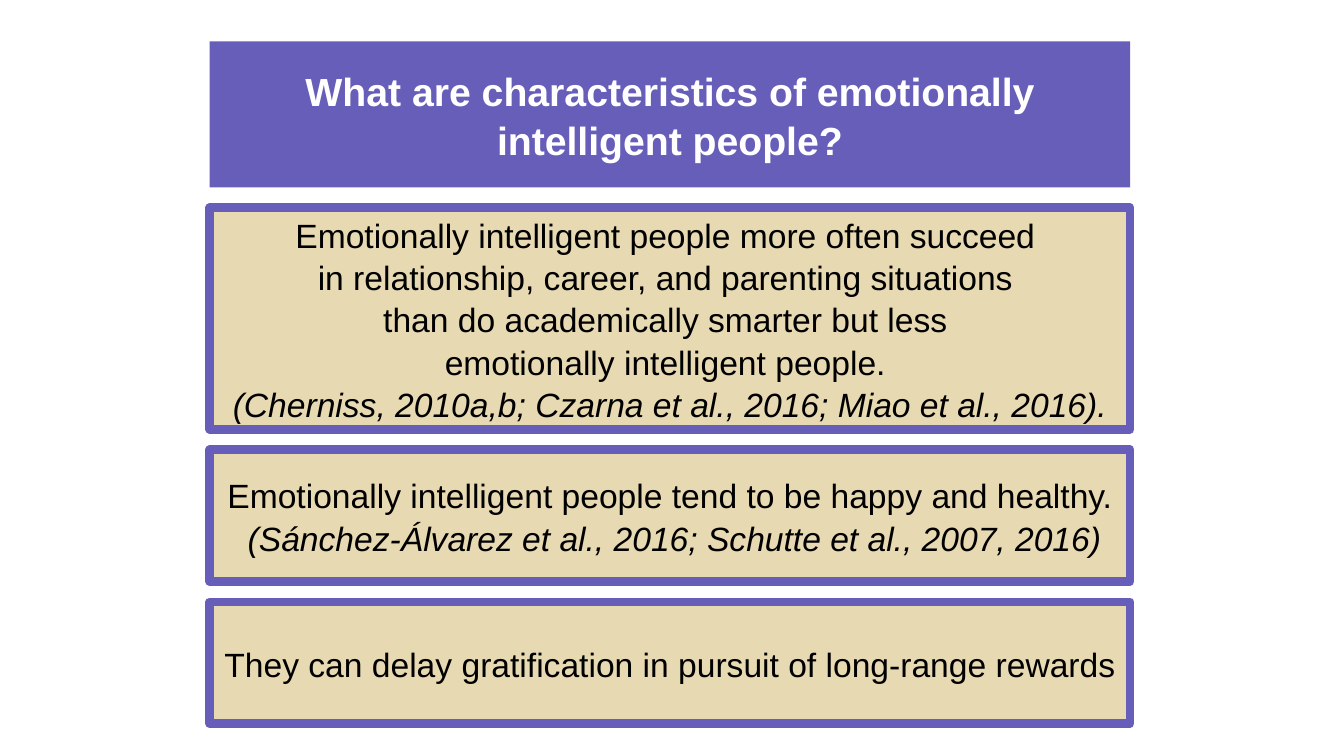
from lxml.etree import SubElement as Sub
from pptx import Presentation as Deck
from pptx.dml.color import RGBColor as Color
from pptx.enum.shapes import MSO_SHAPE as Kind
from pptx.enum.text import MSO_ANCHOR as Anchor, PP_ALIGN as Align
from pptx.oxml.ns import qn
from pptx.util import Inches, Pt

PURPLE, SAND, WHITE, BLACK = "665EB8", "E7D9B1", "FFFFFF", "000000"
LEFT, WIDTH, TOP, GAP = 2.08, 9.13, 0.41, 0.2

TITLE = "What are characteristics of emotionally intelligent people?"
CARDS = [
    (2.2, [
        "Emotionally intelligent people more often succeed ",
        "in relationship, career, and parenting situations ",
        "than do academically smarter but less ",
        "emotionally intelligent people. ",
        "(Cherniss, 2010a,b; Czarna et al., 2016; Miao et al., 2016).",
    ]),
    (1.31, [
        "Emotionally intelligent people tend to be happy and healthy.",
        " (Sánchez-Álvarez et al., 2016; Schutte et al., 2007, 2016)",
    ]),
    (1.21, ["They can delay gratification in pursuit of long-range rewards"]),
]


def paint(form, tone):
    """Give a fill or font color a hex tone."""
    form.rgb = Color.from_string(tone)


def panel(slide, box, tone, lines, size, ink):
    """Draw a filled box with centred lines of text."""
    shape = slide.shapes.add_shape(Kind.RECTANGLE, *map(Inches, box))
    shape.shadow.inherit = False
    shape.fill.solid()
    paint(shape.fill.fore_color, tone)
    shape.line.fill.background()
    frame = shape.text_frame
    frame.word_wrap = True
    frame.vertical_anchor = Anchor.MIDDLE
    frame.text = "\n".join(lines)
    for para in frame.paragraphs:
        para.alignment = Align.CENTER
        para.line_spacing = 1.05
        for run in para.runs:
            run.font.name = "Arial"
            run.font.size = Pt(size)
            paint(run.font.color, ink)
    return shape


def header(slide, box):
    """Draw the title band in bold white."""
    shape = panel(slide, box, PURPLE, [TITLE], 28, WHITE)
    shape.text_frame.paragraphs[0].runs[0].font.bold = True


def card(slide, box, lines):
    """Draw a bordered card with its citation in italics."""
    shape = panel(slide, box, SAND, lines, 24, BLACK)
    line = shape.line
    line.fill.solid()
    paint(line.color, PURPLE)
    line.width = Pt(6)
    Sub(line._get_or_add_ln(), qn("a:round"))
    for para in shape.text_frame.paragraphs:
        if para.text.lstrip().startswith("("):
            para.runs[0].font.italic = True


def main():
    """Build the slide and save it."""
    deck = Deck()
    deck.slide_width, deck.slide_height = Inches(13.33), Inches(7.5)
    slide = deck.slides.add_slide(deck.slide_layouts[6])
    tall = 1.45
    header(slide, (LEFT, TOP, WIDTH, tall))
    top = TOP + tall + GAP
    for tall, lines in CARDS:
        card(slide, (LEFT, top, WIDTH, tall), lines)
        top += tall + GAP
    deck.save("out.pptx")


if __name__ == "__main__":
    main()
